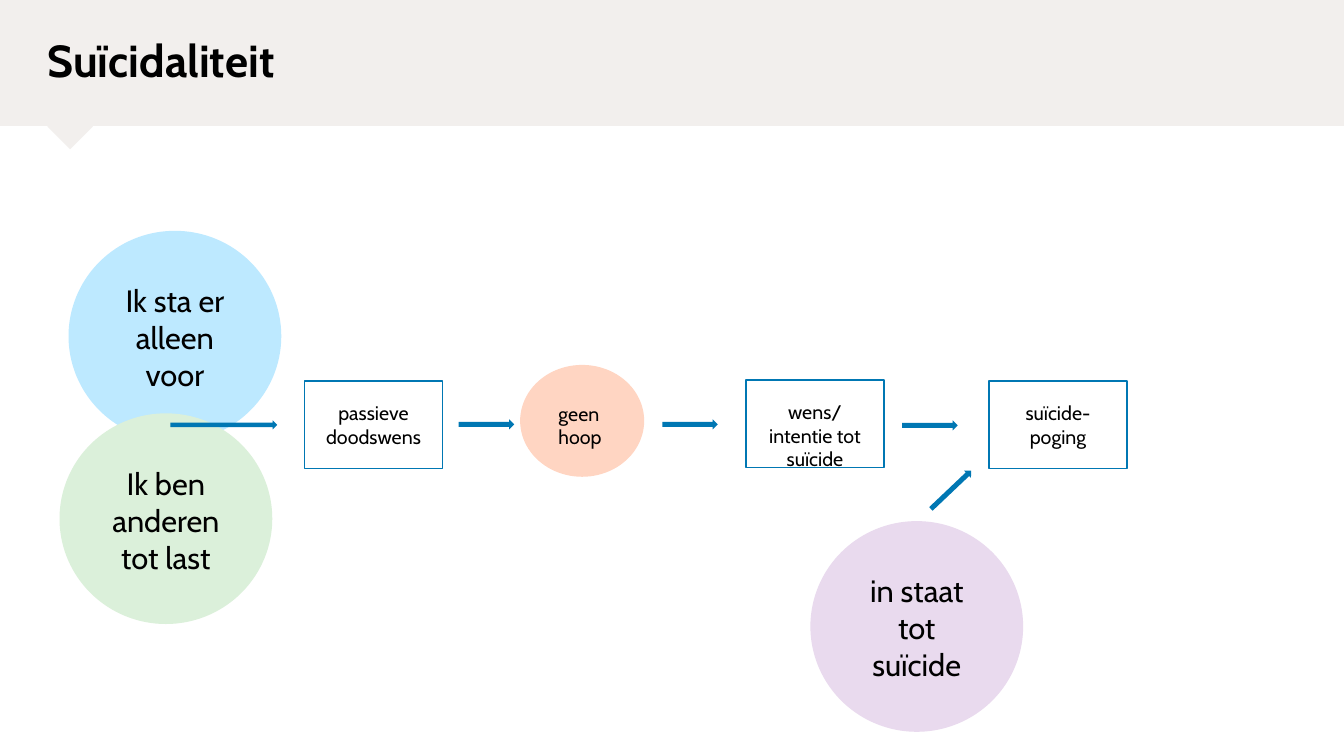
from pptx import Presentation
from pptx.dml.color import RGBColor
from pptx.enum.shapes import MSO_SHAPE
from pptx.enum.text import MSO_ANCHOR, PP_ALIGN
from pptx.util import Inches, Pt

COLORS = {
    "band": "F2EFED", "blue": "BDE9FF", "green": "DBF0DA", "peach": "FFD5C2",
    "lilac": "E9DAEE", "accent": "0077B3", "white": "FFFFFF", "text": "000000",
}


class Board:
    """Draws on one slide; every place and size is a percentage of the slide."""

    font = "Cabin"
    inset = Inches(0.2)
    disc_size = (15.83, 27.87)
    box_size = (10.28, 11.6)
    arrow_size = (4.13, 1.33)

    def __init__(self, deck):
        self.wide, self.high = deck.slide_width, deck.slide_height
        self.slide = deck.slides.add_slide(deck.slide_layouts[5])

    def scale(self, left, top, width, height):
        return (round(self.wide * left / 100), round(self.high * top / 100),
                round(self.wide * width / 100), round(self.high * height / 100))

    def color(self, name):
        return RGBColor.from_string(COLORS[name])

    def label(self, shape, text, size, align, inset, anchor, bold=False):
        frame = shape.text_frame
        frame.text = text
        frame.word_wrap = True
        frame.vertical_anchor = anchor
        frame.margin_left = frame.margin_right = inset
        frame.margin_top = frame.margin_bottom = inset
        line = frame.paragraphs[0]
        line.alignment = align
        font = line.runs[0].font
        font.name, font.size, font.bold = self.font, Pt(size), bold
        font.color.rgb = self.color("text")

    def shape(self, kind, spot, size, fill):
        item = self.slide.shapes.add_shape(kind, *self.scale(*spot, *size))
        item.shadow.inherit = False
        item.fill.solid()
        item.fill.fore_color.rgb = self.color(fill)
        item.line.fill.background()
        return item

    def title(self, text, spot, size):
        item = self.slide.shapes.title
        item.left, item.top, item.width, item.height = self.scale(*spot, *size)
        self.label(item, text, 32, PP_ALIGN.LEFT, 0, MSO_ANCHOR.MIDDLE, True)
        item.text_frame.paragraphs[0].line_spacing = 0.9
        # Bring the title in front of the band
        item.element.getparent().append(item.element)

    def disc(self, text, spot, fill, size=disc_size, points=22,
             align=PP_ALIGN.CENTER):
        item = self.shape(MSO_SHAPE.OVAL, spot, size, fill)
        self.label(item, text, points, align, self.inset, MSO_ANCHOR.TOP)

    def box(self, text, spot):
        item = self.shape(MSO_SHAPE.RECTANGLE, spot, self.box_size, "white")
        item.line.color.rgb = self.color("accent")
        item.line.width = Pt(1)
        self.label(item, text, 14, PP_ALIGN.CENTER, self.inset, MSO_ANCHOR.TOP)

    def arrow(self, spot, size=arrow_size, turn=0):
        item = self.shape(MSO_SHAPE.RIGHT_ARROW, spot, size, "accent")
        item.rotation = turn


def main():
    deck = Presentation()
    deck.slide_width, deck.slide_height = Inches(13.33), Inches(7.5)
    board = Board(deck)

    board.shape(MSO_SHAPE.RECTANGLE, (0, 0), (100, 16.67), "band")
    board.shape(MSO_SHAPE.DIAMOND, (3.53, 13.73), (3.38, 6), "band")
    board.title("Suïcidaliteit", (3.53, 0), (92.93, 16.67))

    board.disc("Ik sta er alleen voor", (5.1, 30.53), "blue")
    board.disc("Ik ben anderen tot last", (4.43, 54.67), "green")
    board.disc("geen hoop", (38.7, 48.27), "peach", (9.23, 14.8), 14,
               PP_ALIGN.LEFT)
    board.disc("in staat tot suïcide", (60.3, 68.93), "lilac")

    for text, spot in (
        ("passieve doodswens", (22.65, 50.4)),
        ("wens/ intentie tot suïcide", (55.5, 50.27)),
        ("suïcide-poging", (73.58, 50.4)),
    ):
        board.box(text, spot)

    board.arrow((12.68, 55.6), (7.95, 1.2))
    for spot in ((34.13, 55.47), (49.28, 55.47), (67.13, 55.6)):
        board.arrow(spot)
    board.arrow((68.7, 64.13), turn=316.5)

    deck.save("out.pptx")


if __name__ == "__main__":
    main()
